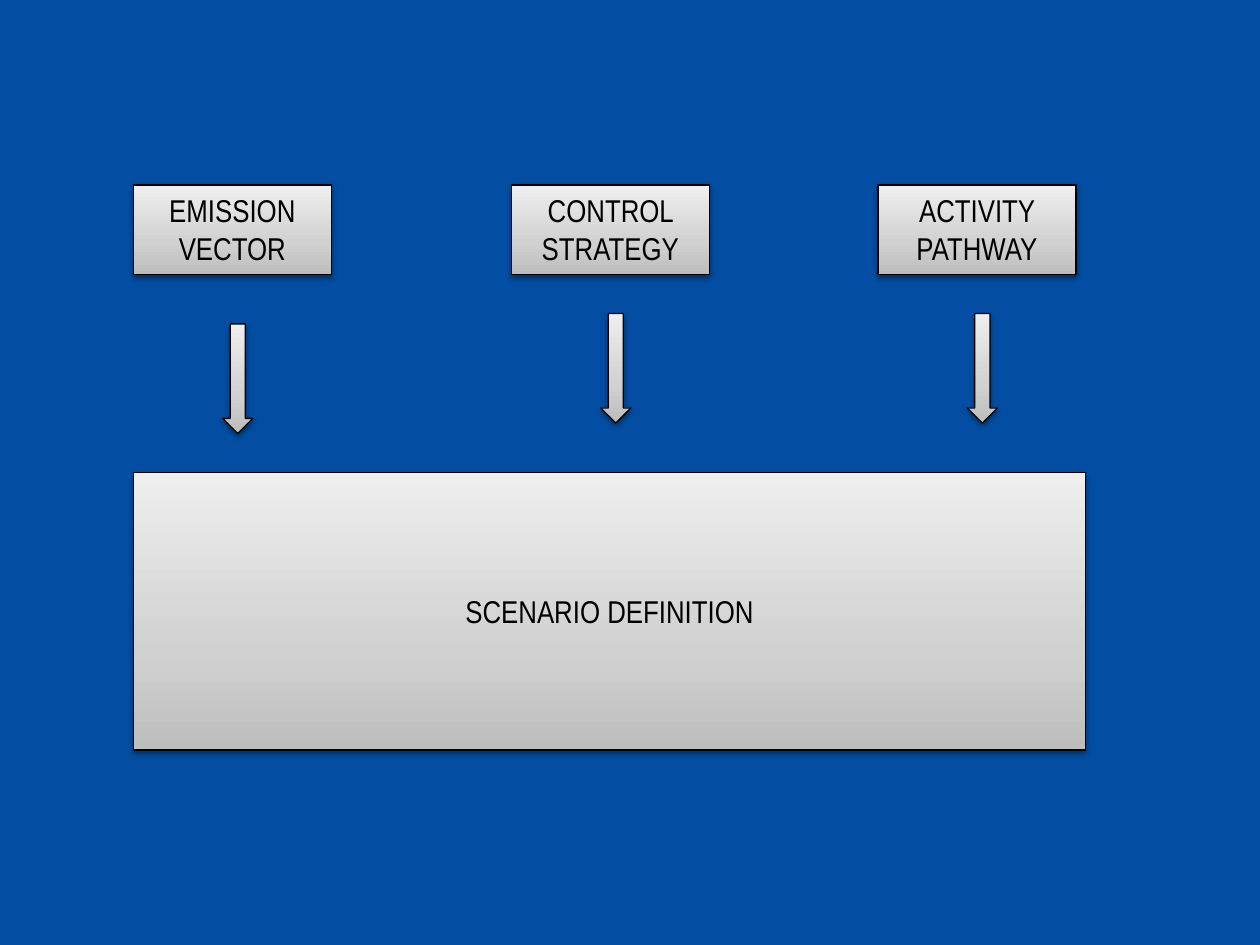
from lxml import etree
from pptx import Presentation, util as u
from pptx.dml.color import RGBColor
from pptx.enum import shapes, text
from pptx.oxml import parse_xml
from pptx.oxml.ns import nsdecls, qn

HUES = {"back": "034EA2", "ink": "000000",
        "low": "BDBDBD", "mid": "D1D1D1", "high": "EEEEEE"}
STOPS = [(0, "low"), (35, "mid"), (100, "high")]
INPUTS = [("EMISSION VECTOR", 2.69, 6.53),
          ("CONTROL STRATEGY", 10.31, 6.32),
          ("ACTIVITY PATHWAY", 17.7, 6.32)]
RESULT = "SCENARIO DEFINITION"
LEFT, TOP = 2.69, 3.73
BOX_W, BOX_H = 3.99, 1.8
ARROW_W, ARROW_H, INSET = 0.61, 2.21, 1.8

SHADOW = (f'<a:outerShdw {nsdecls("a")} blurRad="40000" dist="20000" '
          'dir="5400000" rotWithShape="0"><a:srgbClr val="{}">'
          '<a:alpha val="38000"/></a:srgbClr></a:outerShdw>')


def hue(name):
    return RGBColor.from_string(HUES[name])


def shade(shape):
    shape.fill.gradient()
    shape.fill.gradient_angle = 90
    stops = shape._element.spPr.find(".//" + qn("a:gsLst"))
    for old in list(stops):
        stops.remove(old)
    for pos, name in STOPS:
        stop = etree.SubElement(stops, qn("a:gs"), pos=str(pos * 1000))
        etree.SubElement(stop, qn("a:srgbClr"), val=HUES[name])
    shape.line.color.rgb = hue("ink")
    shape.line.width = u.Pt(0.75)
    shape.shadow.inherit = False
    effects = shape._element.spPr.find(qn("a:effectLst"))
    effects.append(parse_xml(SHADOW.format(HUES["ink"])))


def draw(slide, kind, *place):
    shape = slide.shapes.add_shape(kind, *map(u.Cm, place))
    shade(shape)
    return shape


def label(shape, words, anchor):
    frame = shape.text_frame
    frame.word_wrap = True
    frame.vertical_anchor = anchor
    para = frame.paragraphs[0]
    para.text = words
    para.alignment = text.PP_ALIGN.CENTER
    para.font.name = "Arial Narrow"
    para.font.size = u.Pt(18)
    para.font.color.rgb = hue("ink")


def main():
    deck = Presentation()
    deck.slide_width, deck.slide_height = u.Cm(25.4), u.Cm(19.05)
    slide = deck.slides.add_slide(deck.slide_layouts[6])
    slide.background.fill.solid()
    slide.background.fill.fore_color.rgb = hue("back")
    rect = shapes.MSO_SHAPE.RECTANGLE
    for words, x, y in INPUTS:
        box = draw(slide, rect, x, TOP, BOX_W, BOX_H)
        label(box, words, text.MSO_ANCHOR.TOP)
        draw(slide, shapes.MSO_SHAPE.DOWN_ARROW, x + INSET, y, ARROW_W, ARROW_H)
    result = draw(slide, rect, LEFT, 9.53, 19.2, 5.59)
    label(result, RESULT, text.MSO_ANCHOR.MIDDLE)
    deck.save("out.pptx")


if __name__ == "__main__":
    main()
